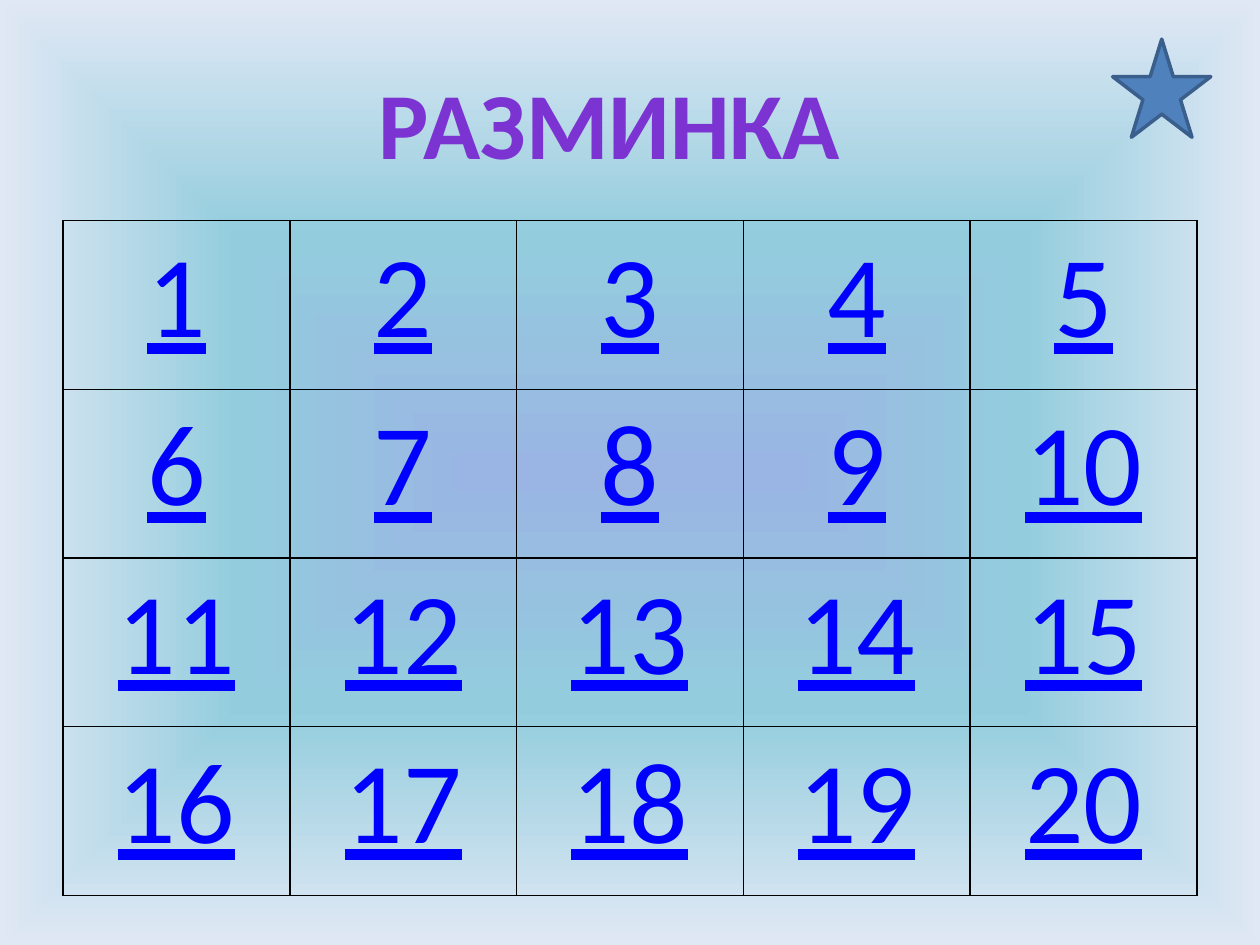
from pptx import Presentation
from pptx.dml.color import RGBColor
from pptx.enum.shapes import MSO_SHAPE as Shape
from pptx.enum.text import PP_ALIGN as Align, MSO_AUTO_SIZE as Auto
from pptx.oxml import parse_xml
from pptx.oxml.ns import nsdecls
from pptx.util import Cm, Pt

FONT = "Calibri"


def paint(color, hue):
    color.rgb = RGBColor.from_string(hue)


def grad(stops, way):
    """Return gradient XML; way is the element that sets its direction."""
    marks = "".join(
        f'<a:gs pos="{pos * 1000}"><a:srgbClr val="{hue}"/></a:gs>'
        for pos, hue in stops)
    return (f'<a:gradFill {nsdecls("a")} rotWithShape="1">'
            f'<a:gsLst>{marks}</a:gsLst>{way}</a:gradFill>')


def edge(tag, hue, width):
    return parse_xml(
        f'<a:{tag} {nsdecls("a")} w="{Pt(width)}"><a:solidFill>'
        f'<a:srgbClr val="{hue}"/></a:solidFill></a:{tag}>')


def add_back(slide):
    mid = '<a:fillToRect l="50000" t="50000" r="50000" b="50000"/>'
    fill = grad([(0, "9AB5E4"), (50, "93CDDD"), (100, "E1E8F5")],
                f'<a:path path="shape">{mid}</a:path>')
    slide._element.cSld.insert(0, parse_xml(
        f'<p:bg {nsdecls("p", "a")}><p:bgPr>{fill}<a:effectLst/>'
        '</p:bgPr></p:bg>'))


def add_board(slide, left, top, width, height, rows=4, cols=5):
    """Draw the grid of question numbers, counted row by row."""
    table = slide.shapes.add_table(
        rows, cols, Cm(left), Cm(top), Cm(width), Cm(height)).table
    table.first_row = table.horz_banding = False
    for col in table.columns:
        col.width = Cm(width / cols)
    for row in table.rows:
        row.height = Cm(height / rows)
    for num, cell in enumerate(table.iter_cells(), 1):
        props = cell._tc.get_or_add_tcPr()
        for tag in ("lnL", "lnR", "lnT", "lnB"):
            props.append(edge(tag, "000000", 1))
        cell.fill.background()
        cell.text = str(num)
        para = cell.text_frame.paragraphs[0]
        para.alignment = Align.CENTER
        font = para.font
        font.name, font.size, font.underline = FONT, Pt(66), True
        paint(font.color, "0000FF")


def add_title(slide, text, left, top, width, height):
    frame = slide.shapes.add_textbox(
        Cm(left), Cm(top), Cm(width), Cm(height)).text_frame
    frame.word_wrap = True
    frame.auto_size = Auto.SHAPE_TO_FIT_TEXT
    para = frame.paragraphs[0]
    para.alignment = Align.CENTER
    run = para.add_run()
    run.text = text
    run.font.name, run.font.size, run.font.bold = FONT, Pt(54), True
    fill = grad([(0, "3D1B67"), (43, "7B34D2"), (48, "7330C4"),
                 (100, "3D1B67")], '<a:lin ang="5400000" scaled="0"/>')
    props = run._r.get_or_add_rPr()
    props.insert(0, edge("ln", "5E457C", 0.71))
    props.insert(1, parse_xml(fill))


def add_star(slide, left, top, size):
    star = slide.shapes.add_shape(
        Shape.STAR_5_POINT, Cm(left), Cm(top), Cm(size), Cm(size))
    star.shadow.inherit = False
    star.fill.solid()
    paint(star.fill.fore_color, "4F81BD")
    paint(star.line.color, "3A5F8C")
    star.line.width = Pt(2)


def main():
    deck = Presentation()
    deck.slide_width, deck.slide_height = Cm(25.4), Cm(19.05)
    slide = deck.slides.add_slide(deck.slide_layouts[6])
    add_back(slide)
    add_board(slide, 1.27, 4.45, 22.86, 13.6)
    add_title(slide, "РАЗМИНКА", 1.57, 1.19, 21.44, 2.57)
    add_star(slide, 22.43, 0.79, 1.98)
    deck.save("out.pptx")


if __name__ == "__main__":
    main()
